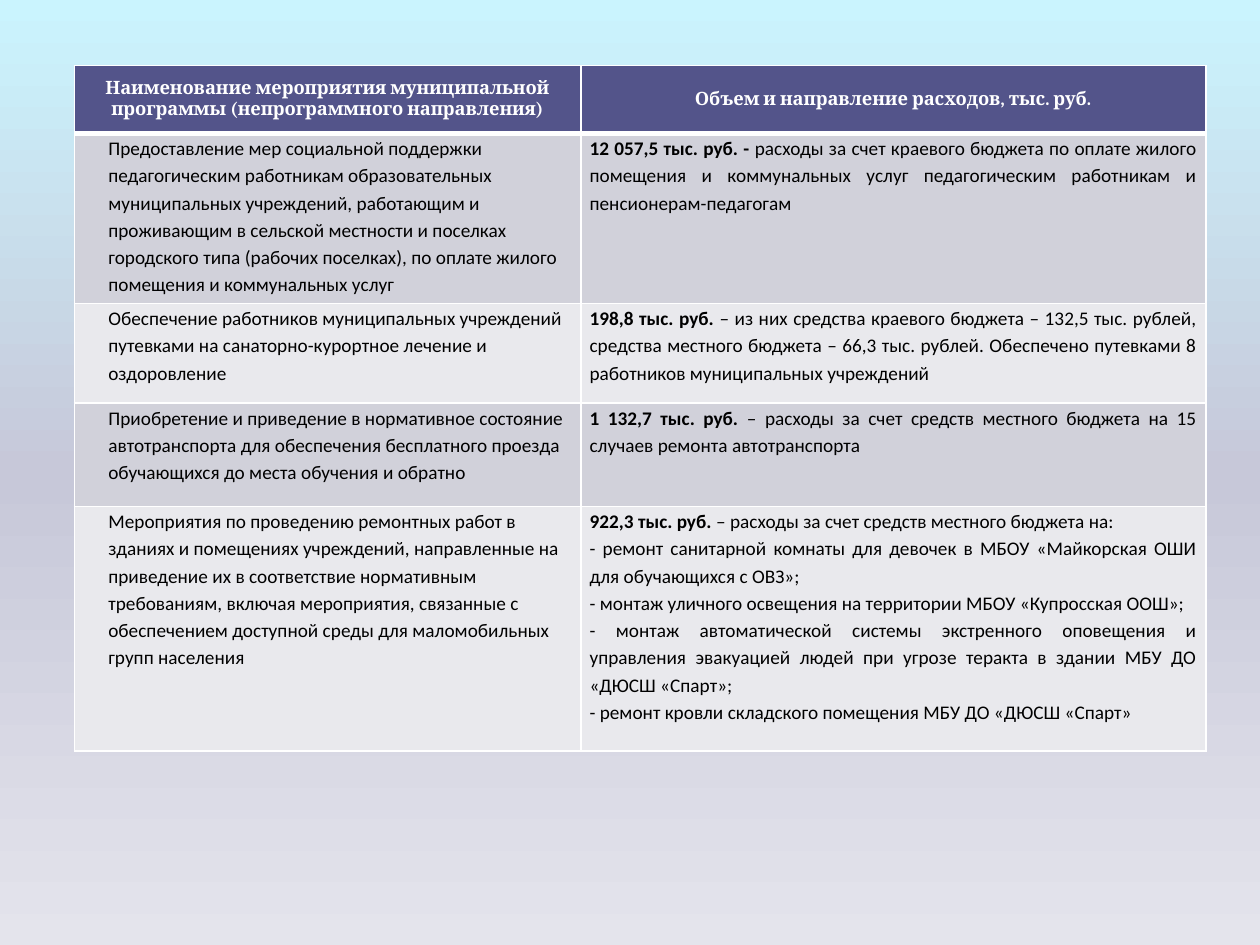
from copy import deepcopy

from lxml.etree import SubElement
from pptx import Presentation
from pptx.dml.color import RGBColor
from pptx.enum.text import MSO_ANCHOR, PP_ALIGN
from pptx.oxml.ns import qn
from pptx.util import Inches, Pt

WHITE = RGBColor(0xFF, 0xFF, 0xFF)
BLACK = RGBColor(0x00, 0x00, 0x00)
HEADER_FILL = RGBColor(0x53, 0x54, 0x8A)
BAND_FILLS = (RGBColor(0xD1, 0xD1, 0xDA), RGBColor(0xE9, 0xE9, 0xED))
BACKGROUND_STOPS = (
    (0, RGBColor(0xCA, 0xF4, 0xFE)),
    (0.5, RGBColor(0xC7, 0xC8, 0xD9)),
    (1, RGBColor(0xE4, 0xE4, 0xEC)),
)

COLUMN_WIDTHS = (4.02, 4.96)
ROW_HEIGHTS = (0.54, 1.35, 0.79, 0.82, 1.94)

HEADERS = (
    "Наименование мероприятия муниципальной программы (непрограммного направления)",
    "Объем и направление расходов, тыс. руб.",
)
# Activity, amount in bold, paragraphs that follow the amount
EXPENSES = (
    (
        "Предоставление мер социальной поддержки педагогическим работникам образовательных "
        "муниципальных учреждений, работающим и проживающим в сельской местности и поселках "
        "городского типа (рабочих поселках), по оплате жилого помещения и коммунальных услуг",
        "12 057,5 тыс. руб. - ",
        ["расходы за счет краевого бюджета по оплате жилого помещения и коммунальных услуг "
         "педагогическим работникам и пенсионерам-педагогам"],
    ),
    (
        "Обеспечение работников муниципальных учреждений путевками на санаторно-курортное "
        "лечение и оздоровление",
        "198,8 тыс. руб. ",
        ["– из них средства краевого бюджета – 132,5 тыс. рублей, средства местного бюджета – "
         "66,3 тыс. рублей. Обеспечено путевками 8 работников муниципальных учреждений"],
    ),
    (
        "Приобретение и приведение в нормативное состояние автотранспорта для обеспечения "
        "бесплатного проезда обучающихся до места обучения и обратно",
        "1 132,7 тыс. руб. ",
        ["– расходы за счет средств местного бюджета на 15 случаев ремонта автотранспорта"],
    ),
    (
        "Мероприятия по проведению ремонтных работ в зданиях и помещениях учреждений, "
        "направленные на приведение их в соответствие нормативным требованиям, включая "
        "мероприятия, связанные с обеспечением доступной среды для маломобильных групп населения",
        "922,3 тыс. руб. ",
        ["– расходы за счет средств местного бюджета на: ",
         "- ремонт санитарной комнаты для девочек в МБОУ «Майкорская ОШИ для обучающихся с ОВЗ»;",
         "- монтаж уличного освещения на территории МБОУ «Купросская ООШ»;",
         "- монтаж автоматической системы экстренного оповещения и управления эвакуацией людей "
         "при угрозе теракта в здании МБУ ДО «ДЮСШ «Спарт»;",
         "- ремонт кровли складского помещения МБУ ДО «ДЮСШ «Спарт»"],
    ),
)


def set_background(slide):
    fill = slide.background.fill
    fill.gradient()
    fill.gradient_angle = 270
    stop_list = slide.element.find(".//" + qn("a:gsLst"))
    stop_list.insert(1, deepcopy(stop_list[0]))
    for stop, (position, color) in zip(fill.gradient_stops, BACKGROUND_STOPS):
        stop.position = position
        stop.color.rgb = color


def style_cell(cell, fill_color, top_width=1, bottom_width=1):
    """Draw the white borders, then the fill, in the order the file format asks for."""
    properties = cell._tc.get_or_add_tcPr()
    for side, width in (("L", 1), ("R", 1), ("T", top_width), ("B", bottom_width)):
        line = SubElement(properties, qn(f"a:ln{side}"), w=str(Pt(width)))
        solid = SubElement(line, qn("a:solidFill"))
        SubElement(solid, qn("a:srgbClr"), val=str(WHITE))
    cell.fill.solid()
    cell.fill.fore_color.rgb = fill_color


def format_run(run, font_name, size, color, bold):
    run.font.name = font_name
    run.font.size = Pt(size)
    run.font.color.rgb = color
    run.font.bold = bold


def fill_header(cell, text):
    style_cell(cell, HEADER_FILL, bottom_width=3)
    cell.vertical_anchor = MSO_ANCHOR.MIDDLE
    cell.text_frame.text = text
    paragraph = cell.text_frame.paragraphs[0]
    paragraph.alignment = PP_ALIGN.CENTER
    format_run(paragraph.runs[0], "Cambria", 10.5, WHITE, True)


def fill_body(cell, paragraphs, alignment, indent=0, amount=""):
    cell.margin_left = cell.margin_right = Inches(0.07)
    cell.margin_top = cell.margin_bottom = 0
    cell.text_frame.text = "\n".join(paragraphs)
    for index, paragraph in enumerate(cell.text_frame.paragraphs):
        paragraph.alignment = alignment
        paragraph.line_spacing = 1.15
        if indent:
            paragraph._p.get_or_add_pPr().set("marL", str(Inches(indent)))
        if amount and index == 0:
            paragraph.text = amount
            paragraph.add_run().text = paragraphs[0]
        for run in paragraph.runs:
            format_run(run, "Calibri", 11, BLACK, run.text == amount)


def add_expense_table(slide):
    frame = slide.shapes.add_table(
        len(ROW_HEIGHTS), len(COLUMN_WIDTHS), Inches(0.59), Inches(0.52),
        Inches(sum(COLUMN_WIDTHS)), Inches(sum(ROW_HEIGHTS)))
    table = frame.table
    table.horz_banding = False
    for column, width in zip(table.columns, COLUMN_WIDTHS):
        column.width = Inches(width)
    for row, height in zip(table.rows, ROW_HEIGHTS):
        row.height = Inches(height)

    for column, text in enumerate(HEADERS):
        fill_header(table.cell(0, column), text)
    for row, (activity, amount, details) in enumerate(EXPENSES, start=1):
        activity_cell, amount_cell = table.cell(row, 0), table.cell(row, 1)
        for cell in (activity_cell, amount_cell):
            style_cell(cell, BAND_FILLS[(row - 1) % 2], top_width=3 if row == 1 else 1)
        fill_body(activity_cell, [activity], PP_ALIGN.LEFT, indent=0.2)
        fill_body(amount_cell, details, PP_ALIGN.JUSTIFY, amount=amount)


def main():
    presentation = Presentation()
    presentation.slide_width = Inches(10)
    presentation.slide_height = Inches(7.5)
    slide = presentation.slides.add_slide(presentation.slide_layouts[6])
    set_background(slide)
    add_expense_table(slide)
    presentation.save("out.pptx")


if __name__ == "__main__":
    main()
